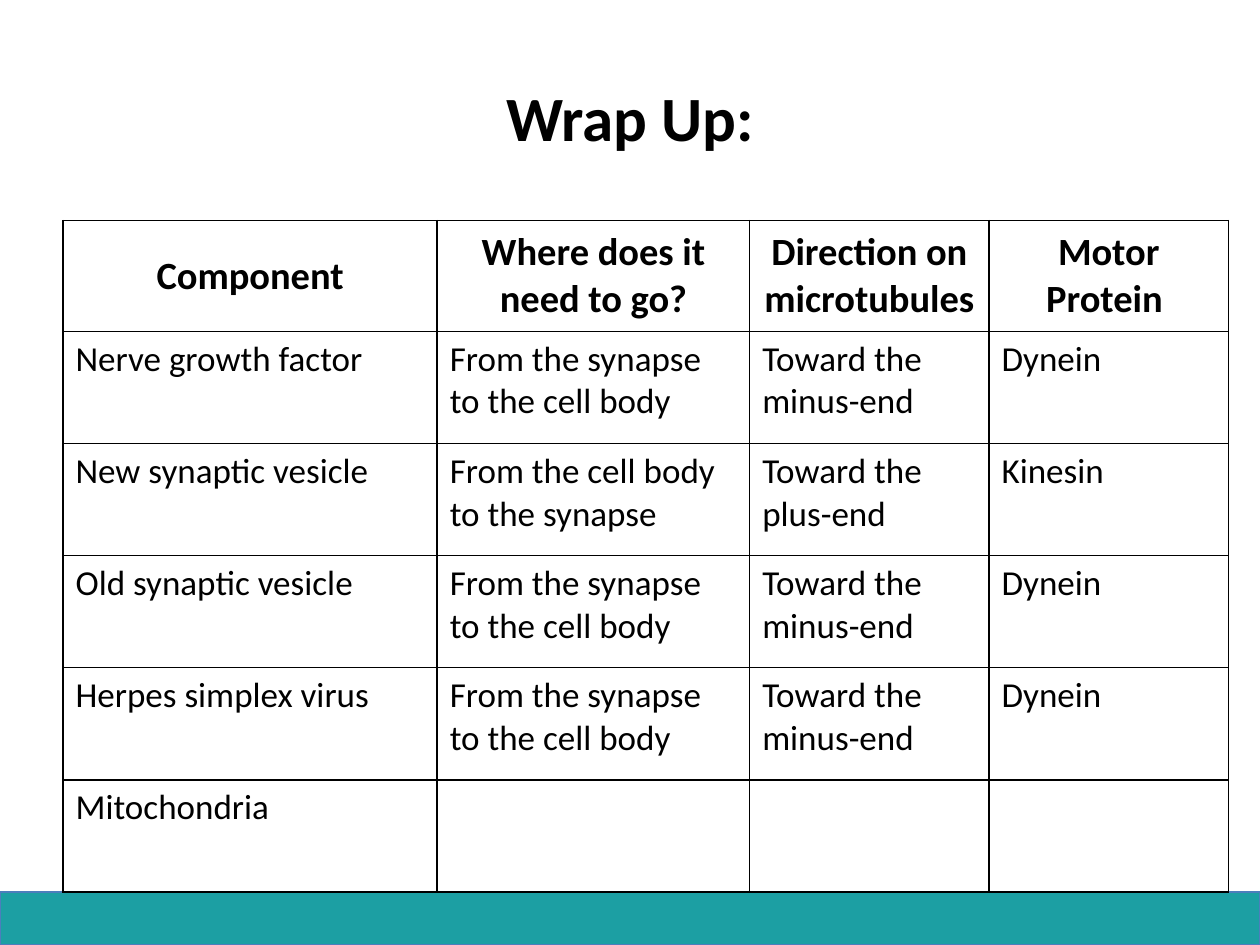
"""Builds the wrap-up slide about motor proteins and their cargo."""
import lxml.etree
import pptx
import pptx.dml.color
import pptx.enum.shapes
import pptx.enum.text
import pptx.oxml.ns
import pptx.util

Inches = pptx.util.Inches
Pt = pptx.util.Pt
ALIGN = pptx.enum.text.PP_ALIGN
ANCHOR = pptx.enum.text.MSO_ANCHOR

COLOURS = {"text": "000000", "rule": "000000", "paper": "FFFFFF",
           "band": "1C9FA3", "band_edge": "4B7EBC"}
FONT = "Calibri"

TO_CELL_BODY = ("From the synapse to the cell body", "Toward the minus-end", "Dynein")
TO_SYNAPSE = ("From the cell body to the synapse", "Toward the plus-end", "Kinesin")
ROWS = [
    ("Component", "Where does it need to go?", "Direction on microtubules", "Motor Protein "),
    ("Nerve growth factor", *TO_CELL_BODY),
    ("New synaptic vesicle", *TO_SYNAPSE),
    ("Old synaptic vesicle", *TO_CELL_BODY),
    ("Herpes simplex virus", *TO_CELL_BODY),
    ("Mitochondria", "", "", ""),
]
COLUMN_WIDTHS = (2.97, 2.48, 1.9, 1.9)
HEADER_HEIGHT, ROW_HEIGHT = 0.88, 0.89


def colour(name):
    return pptx.dml.color.RGBColor.from_string(COLOURS[name])


def write(frame, words, size, bold, align):
    frame.text = words
    paragraph = frame.paragraphs[0]
    paragraph.alignment = align
    for font in [paragraph.font] + [run.font for run in paragraph.runs]:
        font.name = FONT
        font.size = Pt(size)
        font.bold = bold
        font.color.rgb = colour("text")


def add_footer_band(slide):
    band = slide.shapes.add_shape(
        pptx.enum.shapes.MSO_SHAPE.RECTANGLE,
        Inches(0), Inches(7.08), Inches(10), Inches(0.42))
    band.shadow.inherit = False
    band.fill.solid()
    band.fill.fore_color.rgb = colour("band")
    band.line.color.rgb = colour("band_edge")
    band.line.width = Pt(0.75)


def add_title(slide, words):
    title = slide.shapes.add_textbox(Inches(0.5), Inches(0.3), Inches(9), Inches(1.25))
    title.text_frame.word_wrap = True
    title.text_frame.vertical_anchor = ANCHOR.MIDDLE
    write(title.text_frame, words, 36, True, ALIGN.CENTER)


def rule_cell(cell):
    properties = cell._tc.get_or_add_tcPr()
    qn = pptx.oxml.ns.qn
    for position, side in enumerate(("a:lnL", "a:lnR", "a:lnT", "a:lnB")):
        rule = lxml.etree.Element(qn(side), w=str(Pt(1)))
        fill = lxml.etree.SubElement(rule, qn("a:solidFill"))
        lxml.etree.SubElement(fill, qn("a:srgbClr"), val=COLOURS["rule"])
        properties.insert(position, rule)


def add_cargo_table(slide):
    height = HEADER_HEIGHT + ROW_HEIGHT * (len(ROWS) - 1)
    cargo = slide.shapes.add_table(
        len(ROWS), len(COLUMN_WIDTHS), Inches(0.5), Inches(1.75),
        Inches(sum(COLUMN_WIDTHS)), Inches(height)).table
    for column, width in zip(cargo.columns, COLUMN_WIDTHS):
        column.width = Inches(width)
    for index, entries in enumerate(ROWS):
        header = index == 0
        cargo.rows[index].height = Inches(HEADER_HEIGHT if header else ROW_HEIGHT)
        for cell, words in zip(cargo.rows[index].cells, entries):
            write(cell.text_frame, words, 22 if header else 20, header,
                  ALIGN.CENTER if header else ALIGN.LEFT)
            cell.vertical_anchor = ANCHOR.MIDDLE if header else ANCHOR.TOP
            cell.fill.solid()
            cell.fill.fore_color.rgb = colour("paper")
            rule_cell(cell)


def main():
    deck = pptx.Presentation()
    deck.slide_width, deck.slide_height = Inches(10), Inches(7.5)
    slide = deck.slides.add_slide(deck.slide_layouts[6])
    add_footer_band(slide)
    add_title(slide, "Wrap Up:")
    add_cargo_table(slide)
    deck.save("out.pptx")


if __name__ == "__main__":
    main()
